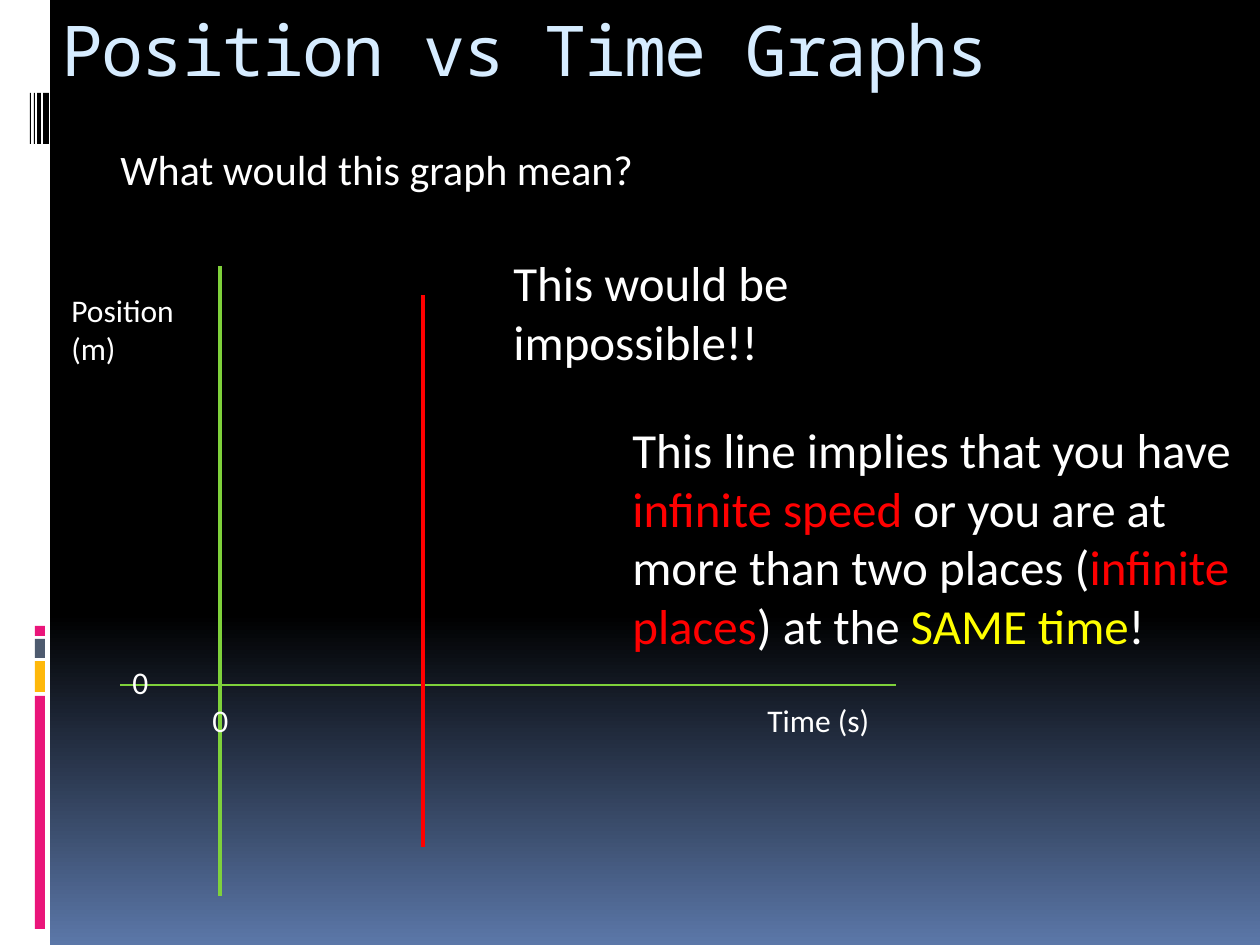
from lxml import etree
from pptx import Presentation
from pptx import util as u
from pptx.dml.color import RGBColor
from pptx.enum import shapes, text
from pptx.oxml import ns

PX = 914400 / 126
WHITE, RED, YELLOW, GREEN = "FFFFFF", "FF0000", "FFFF00", "7FD13B"
PINK, AMBER, SLATE, BLACK = "EA157A", "FEB80A", "4E5B6F", "000000"


def px(*lengths):
    return [u.Emu(round(length * PX)) for length in lengths]


def color(value):
    return RGBColor.from_string(value)


def write(paragraph, content, size=18, font="Calibri", fill=WHITE, spacing=None):
    run = paragraph.add_run()
    run.text = content
    run.font.size = u.Pt(size)
    run.font.name = font
    run.font.color.rgb = color(fill)
    if spacing is not None:
        run.font._element.set("spc", str(spacing))


class GraphSlide:
    def __init__(self, deck):
        self.slide = deck.slides.add_slide(deck.slide_layouts[6])

    def background(self, top, bottom, start):
        fill = self.slide.background.fill
        fill.gradient()
        fill.gradient_angle = 270
        for stop, value, position in zip(fill.gradient_stops, (top, bottom), (start, 1)):
            stop.color.rgb = color(value)
            stop.position = position

    def bar(self, x, y, w, h, fill):
        bar = self.slide.shapes.add_shape(shapes.MSO_SHAPE.RECTANGLE, *px(x, y, w, h))
        bar.shadow.inherit = False
        bar.fill.solid()
        bar.fill.fore_color.rgb = color(fill)
        bar.line.fill.background()

    def line(self, x1, y1, x2, y2, stroke, width):
        line = self.slide.shapes.add_connector(
            shapes.MSO_CONNECTOR.STRAIGHT, *px(x1, y1, x2, y2))
        line.line.color.rgb = color(stroke)
        line.line.width = u.Pt(width)
        etree.SubElement(line._element.spPr, ns.qn("a:effectLst"))

    def text(self, x, y, w, h, *parts, **style):
        frame = self.slide.shapes.add_textbox(*px(x, y, w, h)).text_frame
        frame.word_wrap = True
        frame.vertical_anchor = text.MSO_ANCHOR.TOP
        for content, fill in parts:
            write(frame.paragraphs[0], content, fill=fill, **style)


def main():
    deck = Presentation()
    deck.slide_width, deck.slide_height = px(1260, 945)
    graph = GraphSlide(deck)
    graph.background(BLACK, "5B77A8", 0.65)

    graph.bar(0, 0, 50, 945, WHITE)
    for y, h, fill in ((696, 233, PINK), (661, 31, AMBER), (639, 19, SLATE), (626, 10, PINK)):
        graph.bar(35, y, 10, h, fill)
    for x, w in ((43, 6), (37, 4), (34, 1), (30, 1)):
        graph.bar(x, 93, w, 51, BLACK)

    graph.text(49, 0, 1071, 126, ("Position vs Time Graphs", "D6ECFF"),
               size=40, font="Noto Sans Mono", spacing=-100)

    graph.line(220, 266, 220, 896, GREEN, 2)
    graph.line(120, 685, 896, 685, GREEN, 0.94)
    for x, y, w, h, label in (
        (59, 285, 141, 87, "Position (m)"),
        (755, 695, 141, 49, "Time (s)"),
        (120, 657, 60, 49, "0"),
        (200, 695, 60, 49, "0"),
    ):
        graph.text(x, y, w, h, (label, WHITE))

    graph.text(108, 137, 808, 63, ("What would this graph mean?", WHITE), size=24)
    graph.line(423, 847, 423, 295, RED, 1.75)
    graph.text(501, 246, 394, 131, ("This would be impossible!!", WHITE), size=28)
    graph.text(
        620, 413, 640, 251,
        ("This line implies that you have ", WHITE),
        ("infinite speed ", RED),
        ("or you are at more than two places (", WHITE),
        ("infinite places", RED),
        (") at the ", WHITE),
        ("SAME time", YELLOW),
        ("!", WHITE),
        size=28,
    )
    deck.save("out.pptx")


if __name__ == "__main__":
    main()
